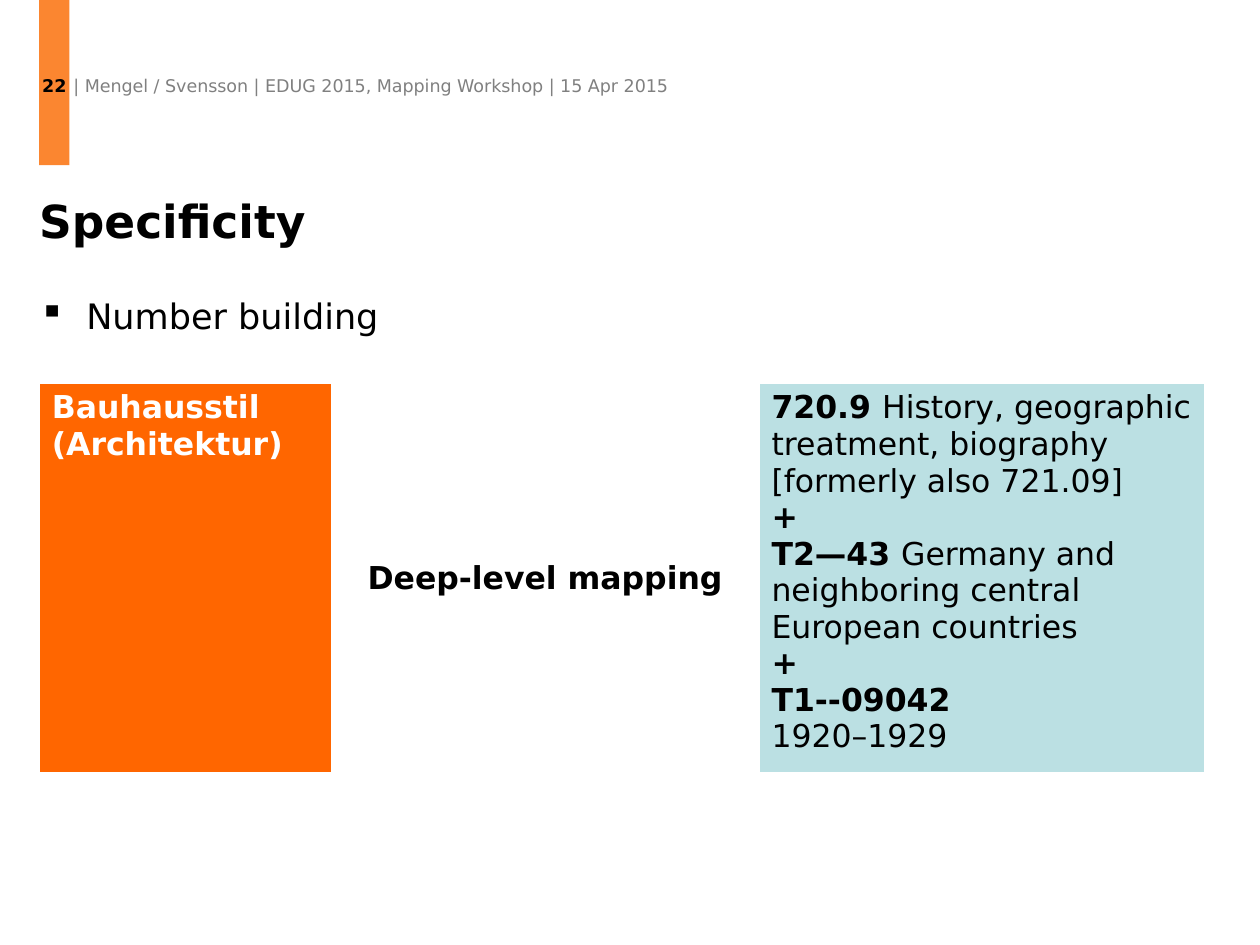
"""Builds the slide on specificity in number building."""
from lxml import etree
from pptx import Presentation
from pptx import util as u
from pptx.dml.color import RGBColor
from pptx.enum import shapes, text
from pptx.oxml.ns import qn

COLOURS = {"black": "000000", "white": "FFFFFF", "grey": "808080",
           "tab": "FB8630", "orange": "FF6600", "teal": "BBE0E3"}
MARGIN, CONTENT_WIDTH = 0.79, 23.5


def colour(name):
    return RGBColor.from_string(COLOURS[name])


def write(paragraph, content, size=18, bold=False, ink="black", font="DejaVu Sans"):
    run = paragraph.add_run()
    run.text = content
    run.font.name, run.font.size, run.font.bold = font, u.Pt(size), bold
    run.font.color.rgb = colour(ink)


class SlideBuilder:
    def __init__(self, slide):
        self.slide = slide

    def inset(self, frame, top=0):
        frame.margin_left = frame.margin_right = frame.margin_bottom = 0
        frame.margin_top = u.Cm(top)

    def line(self, content, left, top, width, height, leading=None, bullet=None, **style):
        box = self.slide.shapes.add_textbox(*map(u.Cm, (left, top, width, height)))
        frame = box.text_frame
        frame.word_wrap = True
        self.inset(frame)
        paragraph = frame.paragraphs[0]
        if leading:
            paragraph.line_spacing = u.Pt(leading)
        if bullet:
            properties = paragraph._p.get_or_add_pPr()
            hang = u.Cm(0.95)
            properties.set("marL", str(hang))
            properties.set("indent", str(-hang))
            etree.SubElement(properties, qn("a:buChar"), char=bullet)
        write(paragraph, content, **style)

    def page_tab(self, number, left, top, width, height):
        tab = self.slide.shapes.add_shape(
            shapes.MSO_SHAPE.RECTANGLE, *map(u.Cm, (left, top, width, height)))
        tab.shadow.inherit = False
        tab.fill.solid()
        tab.fill.fore_color.rgb = colour("tab")
        tab.line.fill.background()
        frame = tab.text_frame
        frame.word_wrap = False
        frame.vertical_anchor = text.MSO_ANCHOR.MIDDLE
        self.inset(frame, top=0.1)
        frame.paragraphs[0].alignment = text.PP_ALIGN.CENTER
        write(frame.paragraphs[0], number, size=10, bold=True)

    def table(self, left, top, widths, height, cells):
        frame = self.slide.shapes.add_table(
            1, len(widths), *map(u.Cm, (left, top, sum(widths), height)))
        grid = frame.table
        grid.first_row = grid.horz_banding = False
        for column, width in zip(grid.columns, widths):
            column.width = u.Cm(width)
        for cell, content in zip(grid.rows[0].cells, cells):
            self.cell(cell, **content)

    def cell(self, cell, paragraphs, fill=None, ink="black", centred=False):
        properties = cell._tc.get_or_add_tcPr()
        for side, points in (("L", 1), ("R", 1), ("T", 1), ("B", 3)):
            border = etree.SubElement(properties, qn(f"a:ln{side}"), w=str(u.Pt(points)))
            solid = etree.SubElement(border, qn("a:solidFill"))
            etree.SubElement(solid, qn("a:srgbClr"), val=COLOURS["white"])
        if fill:
            cell.fill.solid()
            cell.fill.fore_color.rgb = colour(fill)
        else:
            cell.fill.background()
        if centred:
            cell.vertical_anchor = text.MSO_ANCHOR.MIDDLE
        for index, (strong, plain) in enumerate(paragraphs):
            frame = cell.text_frame
            paragraph = frame.add_paragraph() if index else frame.paragraphs[0]
            if centred:
                paragraph.alignment = text.PP_ALIGN.CENTER
            for content, bold in ((strong, True), (plain, False)):
                if content:
                    write(paragraph, content, bold=bold, ink=ink)


def main():
    deck = Presentation()
    deck.slide_width, deck.slide_height = u.Cm(25.4), u.Cm(19.05)
    builder = SlideBuilder(deck.slides.add_slide(deck.slide_layouts[6]))

    builder.page_tab("22", MARGIN, 0, 0.61, 3.33)
    builder.line("| Mengel / Svensson | EDUG 2015, Mapping Workshop | 15 Apr 2015",
                 1.48, 1.52, 19.5, 0.43, size=10, ink="grey")
    builder.line("Specificity", MARGIN, 3.94, CONTENT_WIDTH, 2.16,
                 leading=30, size=26, bold=True)
    builder.line("Number building", MARGIN, 5.72, CONTENT_WIDTH, 1.6,
                 leading=30, bullet="▪", size=20)

    subject = [("Bauhausstil (Architektur)", "")]
    relation = [("Deep-level mapping", "")]
    notation = [
        ("720.9 ", "History, geographic treatment, biography [formerly also 721.09]"),
        ("+", ""),
        ("T2—43 ", "Germany and neighboring central European countries"),
        ("+", ""),
        ("T1--09042", ""),
        ("", "1920–1929"),
    ]
    builder.table(MARGIN, 7.73, (5.89, 8.62, 8.99), 7.56, [
        {"paragraphs": subject, "fill": "orange", "ink": "white"},
        {"paragraphs": relation, "centred": True},
        {"paragraphs": notation, "fill": "teal"},
    ])
    deck.save("out.pptx")


if __name__ == "__main__":
    main()
